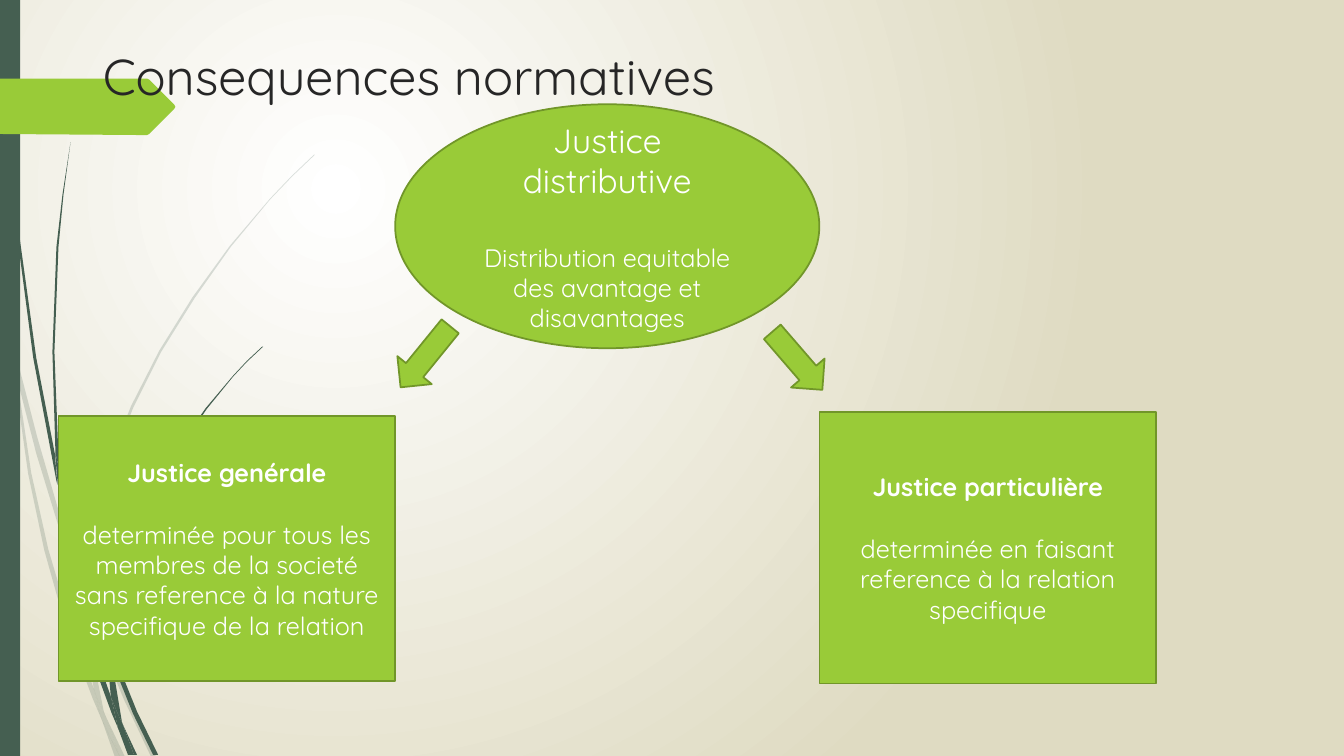
import lxml.etree
import pptx
import pptx.dml.color
import pptx.enum.shapes
import pptx.enum.text
import pptx.oxml.ns
import pptx.util

Pt = pptx.util.Pt
RGB = pptx.dml.color.RGBColor
SHAPE = pptx.enum.shapes.MSO_SHAPE
ALIGN = pptx.enum.text.PP_ALIGN
ANCHOR = pptx.enum.text.MSO_ANCHOR
qn = pptx.oxml.ns.qn

WHITE = RGB(0xFF, 0xFF, 0xFF)
SAND = RGB(0xDF, 0xDB, 0xC2)
PINE = RGB(0x45, 0x5F, 0x51)
LIME = RGB(0x99, 0xCB, 0x38)
OLIVE = RGB(0x71, 0x96, 0x29)
INK = RGB(0x26, 0x26, 0x26)

# Outlines on a grid of 0.72 pt
GRID = 0.72
PALE_BLADES = [
    [(11, 350), (9, 322), (0, 282), (0, 299), (10, 344)],
    [(58, 522), (84, 599), (85, 586), (62, 520), (37, 434), (14, 345), (17, 376), (36, 450)],
    [(92, 607), (88, 596), (88, 610), (123, 694), (150, 751), (155, 751), (127, 692)],
    [(119, 751), (124, 751), (105, 711)],
    [(93, 683), (70, 619), (48, 545), (31, 469), (17, 376), (11, 350), (28, 470),
     (44, 546), (65, 621), (92, 693), (101, 714), (99, 707)],
    [(84, 599), (87, 646), (93, 683), (96, 692), (105, 711), (103, 706), (91, 646),
     (88, 610), (88, 608)],
    [(88, 584), (95, 522), (110, 462), (132, 405), (160, 349), (193, 296), (229, 245),
     (268, 198), (290, 175), (312, 154), (312, 153), (289, 175), (268, 197), (228, 244),
     (191, 295), (158, 348), (130, 403), (107, 461), (92, 522), (85, 584), (85, 586),
     (88, 596)],
    [(101, 714), (114, 751), (119, 751)],
    [(96, 692), (93, 683), (99, 707), (101, 714), (119, 751), (105, 711)],
]
DARK_BLADES = [
    [(7, 110), (17, 233), (33, 355), (56, 477), (57, 481), (55, 457), (55, 453),
     (36, 355), (19, 232), (8, 109), (5, 48), (4, 0), (3, 0), (4, 48)],
    [(113, 649), (110, 641), (111, 656), (132, 708), (152, 749), (157, 749), (136, 706)],
    [(110, 691), (98, 657), (83, 607), (72, 556), (64, 505), (57, 477), (68, 557),
     (79, 608), (93, 659), (111, 708), (117, 722), (116, 717)],
    [(60, 472), (58, 453), (54, 349), (58, 245), (63, 193), (70, 141), (62, 193),
     (56, 245), (52, 349), (55, 449)],
    [(133, 749), (136, 749), (122, 719)],
    [(57, 477), (64, 505), (60, 472), (55, 449), (55, 453)],
    [(111, 633), (125, 552), (158, 476), (205, 406), (231, 374), (245, 359), (261, 344),
     (260, 344), (245, 358), (231, 373), (204, 405), (156, 474), (122, 551), (106, 631),
     (110, 641)],
    [(117, 722), (127, 749), (131, 749)],
    [(106, 645), (110, 691), (116, 706), (122, 719), (121, 716), (111, 656), (109, 651)],
    [(116, 706), (110, 691), (116, 717), (117, 722), (130, 749), (133, 749), (122, 719)],
]
BANNER = [(0, 78), (146, 78), (148, 79), (173, 104), (174, 106), (173, 108), (148, 133),
          (146, 134), (136, 134), (0, 133)]


class Deck:
    """Holds the style and the current slide."""
    font = "Quicksand"

    def __init__(self):
        self.prs = pptx.Presentation()
        self.prs.slide_width, self.prs.slide_height = Pt(960), Pt(540)
        self.s = self.prs.slides.add_slide(self.prs.slide_layouts[5])

    def background(self, inner, outer):
        fill = self.s.background.fill
        fill.gradient()
        for stop, colour in zip(fill.gradient_stops, (inner, outer)):
            stop.color.rgb = colour
        grad = self.s.element.find(".//" + qn("a:gradFill"))
        grad.remove(grad.find(qn("a:lin")))
        circle = lxml.etree.SubElement(grad, qn("a:path"), {"path": "circle"})
        lxml.etree.SubElement(circle, qn("a:fillToRect"),
                              {"l": "50000", "t": "50000", "r": "100000", "b": "100000"})

    def paint(self, sp, colour, line=None, opacity=100):
        sp.shadow.inherit = False
        sp.fill.solid()
        sp.fill.fore_color.rgb = colour
        if opacity < 100:
            rgb = sp.element.spPr.find(".//" + qn("a:srgbClr"))
            lxml.etree.SubElement(rgb, qn("a:alpha"), {"val": str(opacity * 1000)})
        if line is None:
            sp.line.fill.background()
        else:
            sp.line.color.rgb = line
            sp.line.width = Pt(1.25)

    def outline(self, points, colour, opacity=100):
        builder = self.s.shapes.build_freeform(*points[0], scale=Pt(GRID))
        builder.add_line_segments(points[1:], close=True)
        self.paint(builder.convert_to_shape(), colour, opacity=opacity)

    def shape(self, kind, box, colour=LIME, line=OLIVE, rotation=0):
        sp = self.s.shapes.add_shape(kind, *map(Pt, box))
        sp.rotation = rotation
        self.paint(sp, colour, line)
        return sp

    def add_text(self, p, text, **fmt):
        r = p.add_run()
        r.text = text
        for name, value in {"name": self.font, **fmt}.items():
            if name == "color":
                r.font.color.rgb = value
            else:
                setattr(r.font, name, value)

    def card(self, kind, box, heading, body, gap, **heading_fmt):
        tf = self.shape(kind, box).text_frame
        tf.word_wrap = True
        tf.vertical_anchor = ANCHOR.MIDDLE
        p = tf.paragraphs[0]
        p.space_after = Pt(gap)
        self.add_text(p, heading, color=WHITE, **heading_fmt)
        self.add_text(tf.add_paragraph(), body, color=WHITE, size=Pt(18))
        for p in tf.paragraphs:
            p.alignment = ALIGN.CENTER

    def title(self, text, box):
        sp = self.s.shapes.title
        self.s.shapes.element.append(sp.element)  # in front of the decoration
        for name, value in zip(("left", "top", "width", "height"), box):
            setattr(sp, name, Pt(value))
        tf = sp.text_frame
        tf.word_wrap = True
        tf.auto_size = pptx.enum.text.MSO_AUTO_SIZE.NONE
        tf.vertical_anchor = ANCHOR.TOP
        tf.paragraphs[0].alignment = ALIGN.LEFT
        self.add_text(tf.paragraphs[0], text, size=Pt(36), color=INK)


def main():
    deck = Deck()

    # Background and decoration
    deck.background(WHITE, SAND)
    for blades, opacity in ((PALE_BLADES, 20), (DARK_BLADES, 100)):
        for blade in blades:
            deck.outline(blade, PINE, opacity)
    deck.shape(SHAPE.RECTANGLE, (0, 0, 14.4, 540), PINE, None)
    deck.outline(BANNER, LIME)

    # Title
    deck.title("Consequences normatives", (66.24, 28.8, 828, 66.24))

    # Main concept and arrows to its two forms
    deck.card(SHAPE.OVAL, (282.24, 74.5, 303, 174.24), "Justice distributive",
              "Distribution equitable des avantage et disavantages", 30, size=Pt(24))
    deck.shape(SHAPE.RIGHT_ARROW, (542.16, 241.92, 54.72, 31.68), rotation=49.2)
    deck.shape(SHAPE.RIGHT_ARROW, (275.76, 239.04, 56.16, 31.68), rotation=129.1)

    # The two forms
    for box, heading, body in (
            ((41.76, 297.36, 240.48, 189.36), "Justice genérale",
             "determinée pour tous les membres de la societé sans reference "
             "à la nature specifique de la relation"),
            ((585.36, 294.48, 240.48, 193.68), "Justice particulière",
             "determinée en faisant reference à la relation specifique")):
        deck.card(SHAPE.RECTANGLE, box, heading, body, 22.5, size=Pt(18), bold=True)

    deck.prs.save("out.pptx")


if __name__ == "__main__":
    main()
